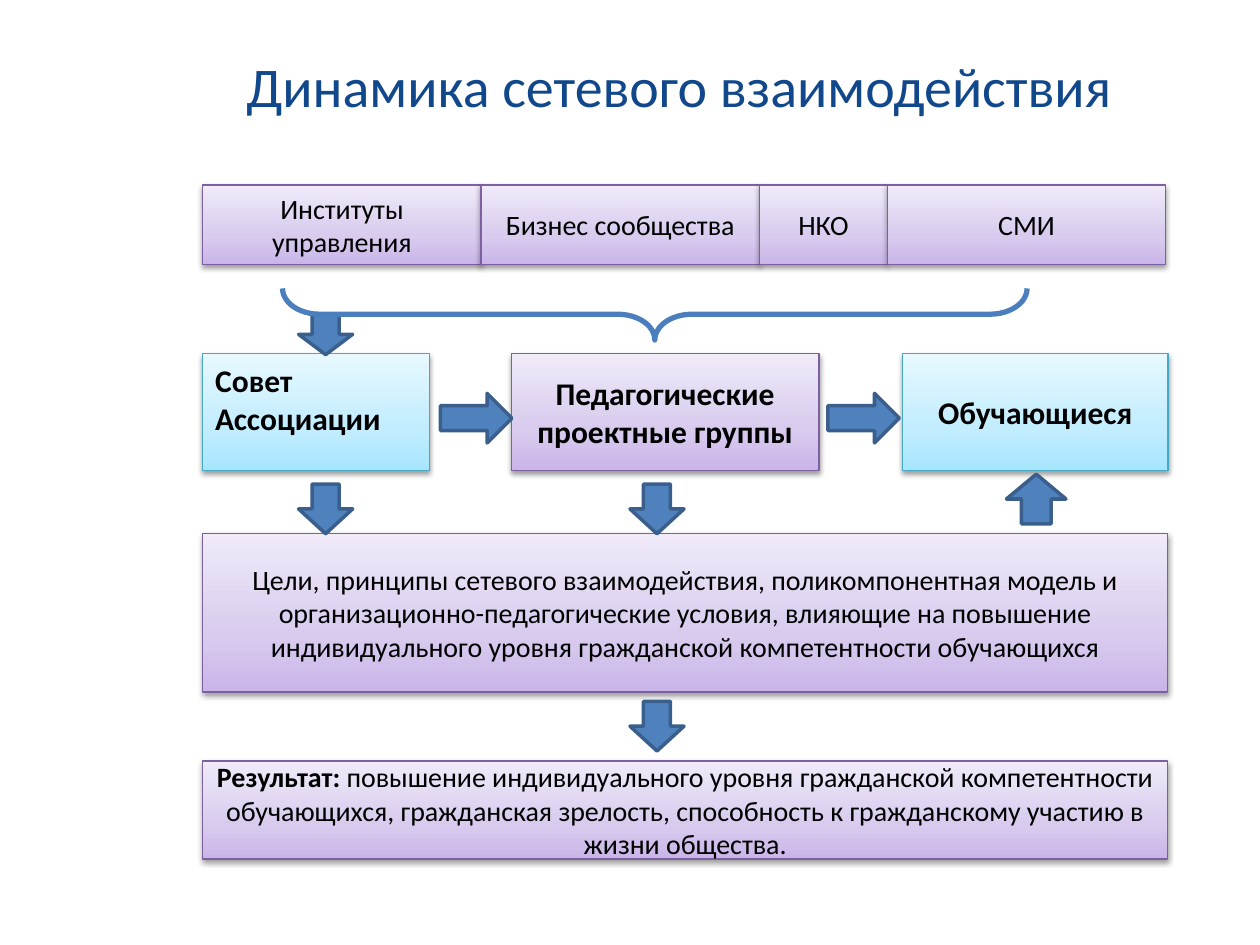
from itertools import accumulate

from lxml import etree
from pptx import Presentation
from pptx.dml.color import RGBColor
from pptx.enum.shapes import MSO_SHAPE
from pptx.enum.text import MSO_ANCHOR, PP_ALIGN
from pptx.oxml.ns import qn
from pptx.util import Cm, Pt

RECT = MSO_SHAPE.RECTANGLE
DOWN = MSO_SHAPE.DOWN_ARROW
UP = MSO_SHAPE.UP_ARROW
RIGHT = MSO_SHAPE.RIGHT_ARROW
BRACE = MSO_SHAPE.RIGHT_BRACE
MIDDLE = MSO_ANCHOR.MIDDLE
CENTER = PP_ALIGN.CENTER
LEFT = PP_ALIGN.LEFT

PURPLE = {"line": "7D60A0", "stops": ((0, "C9B5E8"), (35, "D8CBEE"), (100, "F0EAF9"))}
CYAN = {"line": "46AAC5", "stops": ((0, "A7E6FF"), (35, "C1EDFF"), (100, "E7F8FF"))}


def color(value):
    return RGBColor.from_string(value)


def add_color(parent, value):
    return etree.SubElement(parent, qn("a:srgbClr"), val=value)


class Diagram:
    font = "Calibri"
    title_color = "11478B"
    text_color = "000000"
    arrow_fill = "4F81BD"
    arrow_line = "3A5F8C"
    brace_line = "4B7EBC"

    def __init__(self, slide):
        self.slide = slide

    def fill_text(self, frame, runs, size, text_color, align=CENTER):
        frame.word_wrap = True
        frame.vertical_anchor = MIDDLE
        paragraph = frame.paragraphs[0]
        paragraph.alignment = align
        for text, bold in runs:
            run = paragraph.add_run()
            run.text = text
            run.font.color.rgb = color(text_color)
            formats = {"name": self.font, "size": Pt(size), "bold": bold}
            for name, value in formats.items():
                setattr(run.font, name, value)

    def title(self, text, left, top, width, height):
        heading = self.slide.shapes.title
        place = {"left": left, "top": top, "width": width, "height": height}
        for name, value in place.items():
            setattr(heading, name, Cm(value))
        self.fill_text(heading.text_frame, [(text, False)], 32, self.title_color)

    def shape(self, kind, left, top, width, height, line, weight):
        shape = self.slide.shapes.add_shape(kind, Cm(left), Cm(top), Cm(width), Cm(height))
        shape.shadow.inherit = False
        shape.line.color.rgb = color(line)
        shape.line.width = Pt(weight)
        return shape

    def box(self, runs, left, top, width, height, look=PURPLE, size=16, align=CENTER):
        box = self.shape(RECT, left, top, width, height, look["line"], 0.75)
        box.fill.gradient()
        box.fill.gradient_angle = 90
        properties = box._element.spPr
        stops = properties.find(qn("a:gradFill")).find(qn("a:gsLst"))
        for stop in list(stops):
            stops.remove(stop)
        for position, value in look["stops"]:
            add_color(etree.SubElement(stops, qn("a:gs"), pos=str(position * 1000)), value)
        shadow = etree.SubElement(
            properties.find(qn("a:effectLst")), qn("a:outerShdw"),
            blurRad="40000", dist="20000", dir="5400000", rotWithShape="0")
        etree.SubElement(add_color(shadow, "000000"), qn("a:alpha"), val="38000")
        self.fill_text(box.text_frame, runs, size, self.text_color, align)
        return box

    def arrow(self, kind, left, top, width, height=1):
        arrow = self.shape(kind, left, top, width, height, self.arrow_line, 2)
        arrow.fill.solid()
        arrow.fill.fore_color.rgb = color(self.arrow_fill)

    def brace(self, left, top, width, height):
        brace = self.shape(BRACE, left, top, width, height, self.brace_line, 3)
        brace.fill.background()
        brace.rotation = 90
        brace.adjustments[0] = 0.72
        brace.adjustments[1] = 0.5


def main():
    presentation = Presentation()
    presentation.slide_width = Cm(25.4)
    presentation.slide_height = Cm(19.05)
    diagram = Diagram(presentation.slides.add_slide(presentation.slide_layouts[5]))
    diagram.title("Динамика сетевого взаимодействия", 3.89, 0.91, 19.61, 1.6)

    margin, full_width = 4.09, 19.45
    partners = {"Институты управления": 5.61, "Бизнес сообщества": 5.61, "НКО": 2.58, "СМИ": 5.61}
    for (partner, width), left in zip(partners.items(), accumulate(partners.values(), initial=margin)):
        diagram.box([(partner, False)], left, 3.73, width, 1.6)

    stage = {"top": 7.13, "height": 2.35, "size": 18}
    council = diagram.box([("Совет Ассоциации", True)], margin, width=4.57, look=CYAN, align=LEFT, **stage)
    council.text_frame.margin_bottom = Cm(0.64)
    diagram.box([("Педагогические проектные группы", True)], 10.31, width=6.2, **stage)
    diagram.box([("Обучающиеся", True)], 18.19, width=5.36, look=CYAN, **stage)

    goals = ("Цели, принципы сетевого взаимодействия, поликомпонентная модель и "
             "организационно-педагогические условия, влияющие на повышение "
             "индивидуального уровня гражданской компетентности обучающихся")
    diagram.box([(goals, False)], margin, 10.75, full_width, 3.2)
    outcome = (" повышение индивидуального уровня гражданской компетентности обучающихся, "
               "гражданская зрелость, способность к гражданскому участию в жизни общества.")
    diagram.box([("Результат:", True), (outcome, False)], margin, 15.34, full_width, 1.98)

    council_x, groups_x, arrow_width = 6.02, 12.7, 1.09
    diagram.arrow(DOWN, council_x, 6.33, arrow_width, 0.82)
    diagram.brace(12.68, -1.17, 1.04, 15.01)
    for left in (8.88, 16.69):
        diagram.arrow(RIGHT, left, 7.93, 1.44)
    for left, top in ((council_x, 9.76), (groups_x, 9.76), (groups_x, 14.14)):
        diagram.arrow(DOWN, left, top, arrow_width)
    diagram.arrow(UP, 20.29, 9.56, 1.2)

    presentation.save("out.pptx")


if __name__ == "__main__":
    main()
